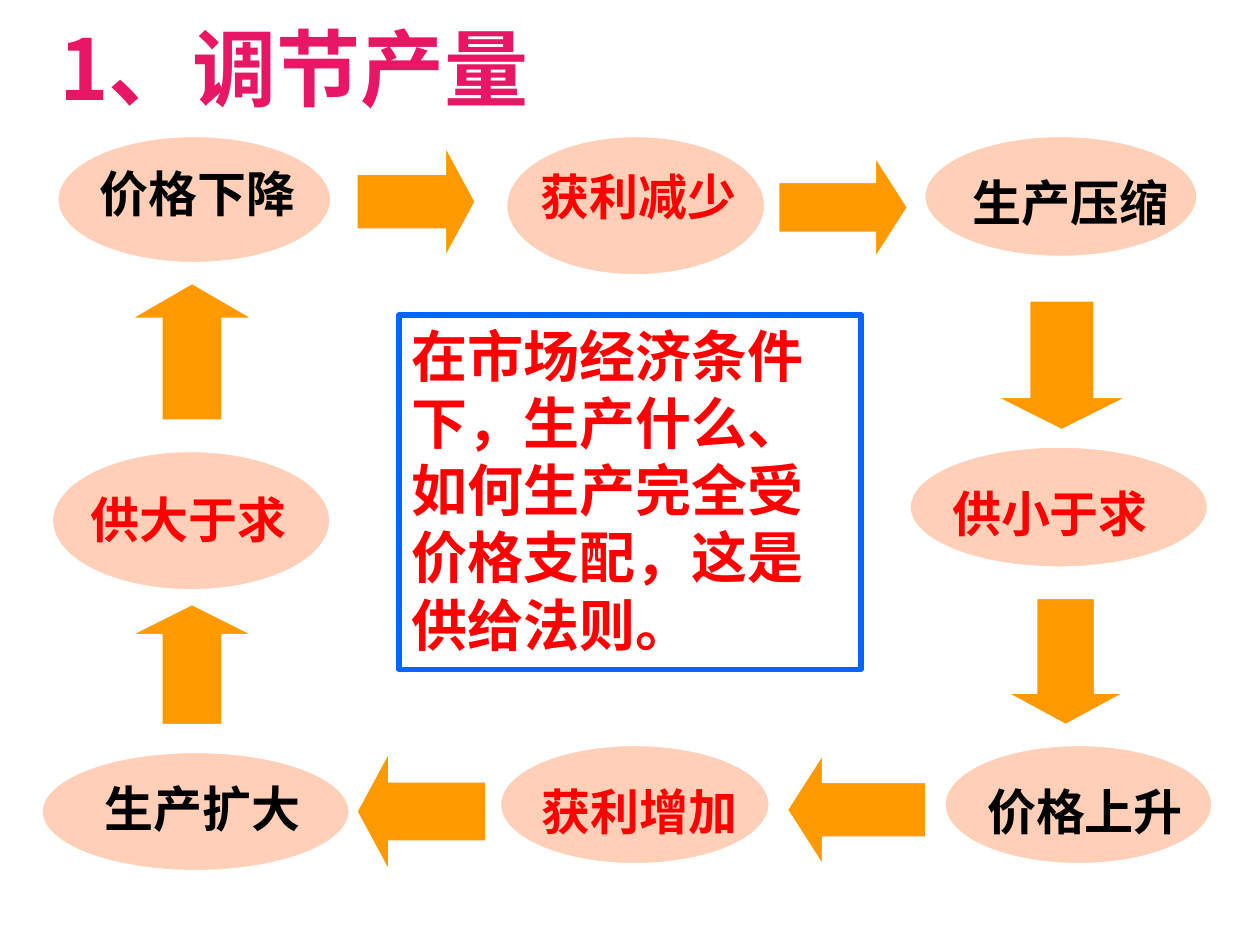
from lxml import etree
from pptx import Presentation
from pptx.dml.color import RGBColor
from pptx.enum.shapes import MSO_SHAPE as Preset
from pptx.enum.text import MSO_ANCHOR as Anchor, MSO_AUTO_SIZE as AutoSize, PP_ALIGN as Align
from pptx.oxml.ns import qn
from pptx.util import Pt

FONT = "Noto Sans CJK SC"
COLORS = {
    "title": "E81766",
    "oval": "FFCFB8",
    "arrow": "FF9900",
    "frame": "0066FF",
    "white": "FFFFFF",
    "black": "000000",
    "red": "FF0000",
}

# label, colour, oval box, label offset inside the oval, label width
STAGES = [
    ("价格下降", "black", (33, 78, 156, 72), (17, 12), 142),
    ("获利减少", "red", (289.5, 78, 147.5, 79), (12.5, 13.5), 136),
    ("生产压缩", "black", (528.5, 78, 155.5, 68.5), (20, 17), 147.5),
    ("供小于求", "red", (520, 255.5, 170, 68.5), (17, 17), 136),
    ("价格上升", "black", (540, 426, 152.5, 67.5), (17, 17), 136),
    ("获利增加", "red", (286, 426, 153.5, 67.5), (16.5, 17), 147.5),
    ("生产扩大", "black", (24, 430, 175.5, 67.5), (28.5, 11.5), 130.5),
    ("供大于求", "red", (30, 258, 158.5, 79), (14.5, 18), 147.5),
]

# direction, box, head length relative to the shorter side
ARROWS = [
    (Preset.RIGHT_ARROW, (204, 84, 67.5, 62.5), 0.27),
    (Preset.RIGHT_ARROW, (445, 90, 73.5, 57), 0.32),
    (Preset.DOWN_ARROW, (570, 172, 73.5, 73.5), 0.25),
    (Preset.DOWN_ARROW, (576, 342, 66, 72), 0.27),
    (Preset.LEFT_ARROW, (450, 431.5, 79, 62.5), 0.32),
    (Preset.LEFT_ARROW, (204, 430, 73.5, 67.5), 0.27),
    (Preset.UP_ARROW, (75.5, 345.5, 68.5, 68.5), 0.25),
    (Preset.UP_ARROW, (75.5, 162, 68.5, 78), 0.29),
]


def color(name):
    return RGBColor.from_string(COLORS[name])


def write(shape, text, size, color_name, align=Align.LEFT):
    frame = shape.text_frame
    frame.text = text
    frame.word_wrap = True
    frame.auto_size = AutoSize.NONE
    frame.vertical_anchor = Anchor.TOP
    para = frame.paragraphs[0]
    para.alignment = align
    font = para.font
    font.size = Pt(size)
    font.bold = True
    font.color.rgb = color(color_name)
    font.name = FONT
    defaults = para._p.pPr.find(qn("a:defRPr"))
    etree.SubElement(defaults, qn("a:ea")).set("typeface", FONT)


def add_preset(page, preset, box, fill, line="white", line_width=0.75):
    shape = page.shapes.add_shape(preset, *map(Pt, box))
    shape.shadow.inherit = False
    shape.fill.solid()
    shape.fill.fore_color.rgb = color(fill)
    shape.line.color.rgb = color(line)
    shape.line.width = Pt(line_width)
    return shape


def set_title(page, box):
    title = page.shapes.title
    title.left, title.top, title.width, title.height = map(Pt, box)
    write(title, "1、调节产量", 48, "title", Align.CENTER)
    title.text_frame.margin_left = title.text_frame.margin_right = 0


def add_stage(page, label, color_name, box, offset, width):
    """Draw one oval of the cycle with its label."""
    add_preset(page, Preset.OVAL, box, "oval")
    left, top = box[0] + offset[0], box[1] + offset[1]
    text_box = page.shapes.add_textbox(Pt(left), Pt(top), Pt(width), Pt(41))
    write(text_box, label, 28, color_name)


def add_arrow(page, direction, box, head):
    arrow = add_preset(page, direction, box, "arrow")
    arrow.adjustments[0] = 0.5
    arrow.adjustments[1] = head


def add_conclusion(page, box):
    frame = add_preset(page, Preset.RECTANGLE, box, "white", "frame", 3)
    write(frame, "在市场经济条件下，生产什么、如何生产完全受价格支配，这是供给法则。", 32, "red")


def main():
    deck = Presentation()
    deck.slide_width, deck.slide_height = Pt(720), Pt(540)
    page = deck.slides.add_slide(deck.slide_layouts[5])
    set_title(page, (18, 6, 300, 48))
    for stage in STAGES:
        add_stage(page, *stage)
    for arrow in ARROWS:
        add_arrow(page, *arrow)
    add_conclusion(page, (228, 180, 264, 202.5))
    deck.save("out.pptx")


if __name__ == "__main__":
    main()
